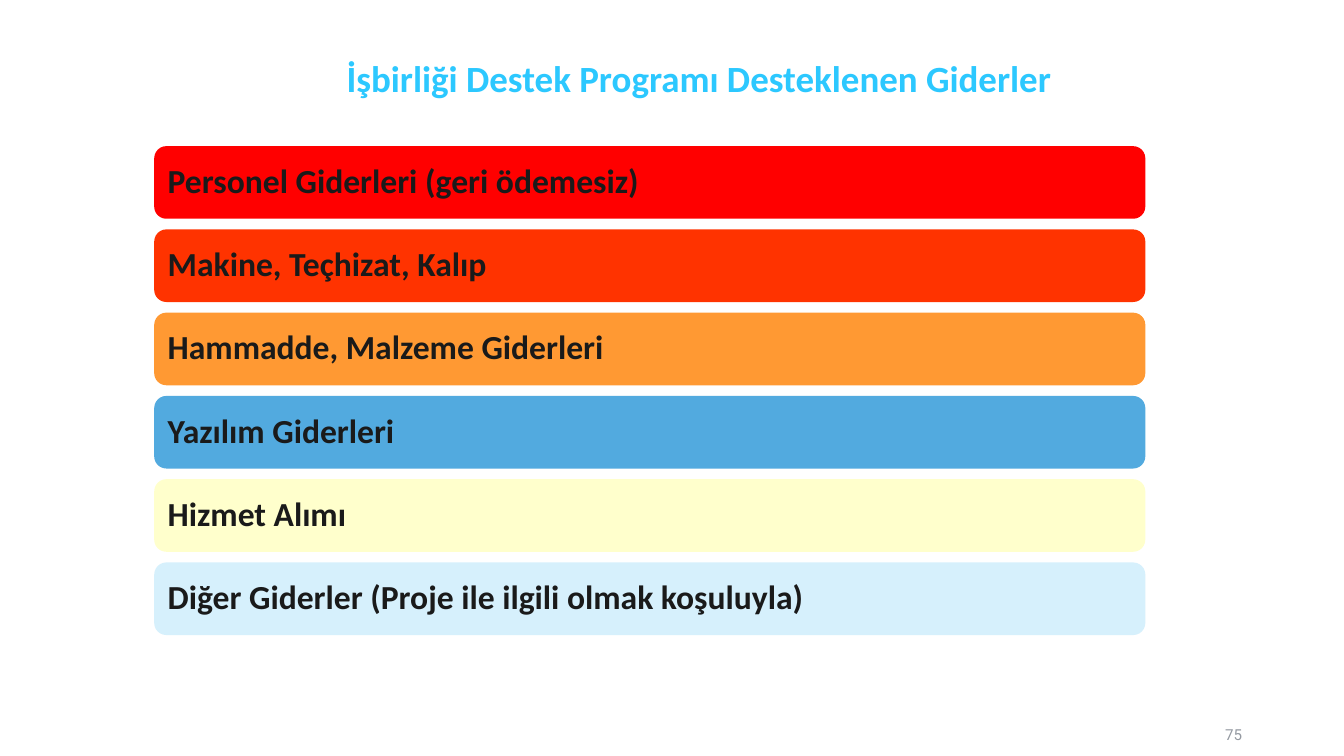
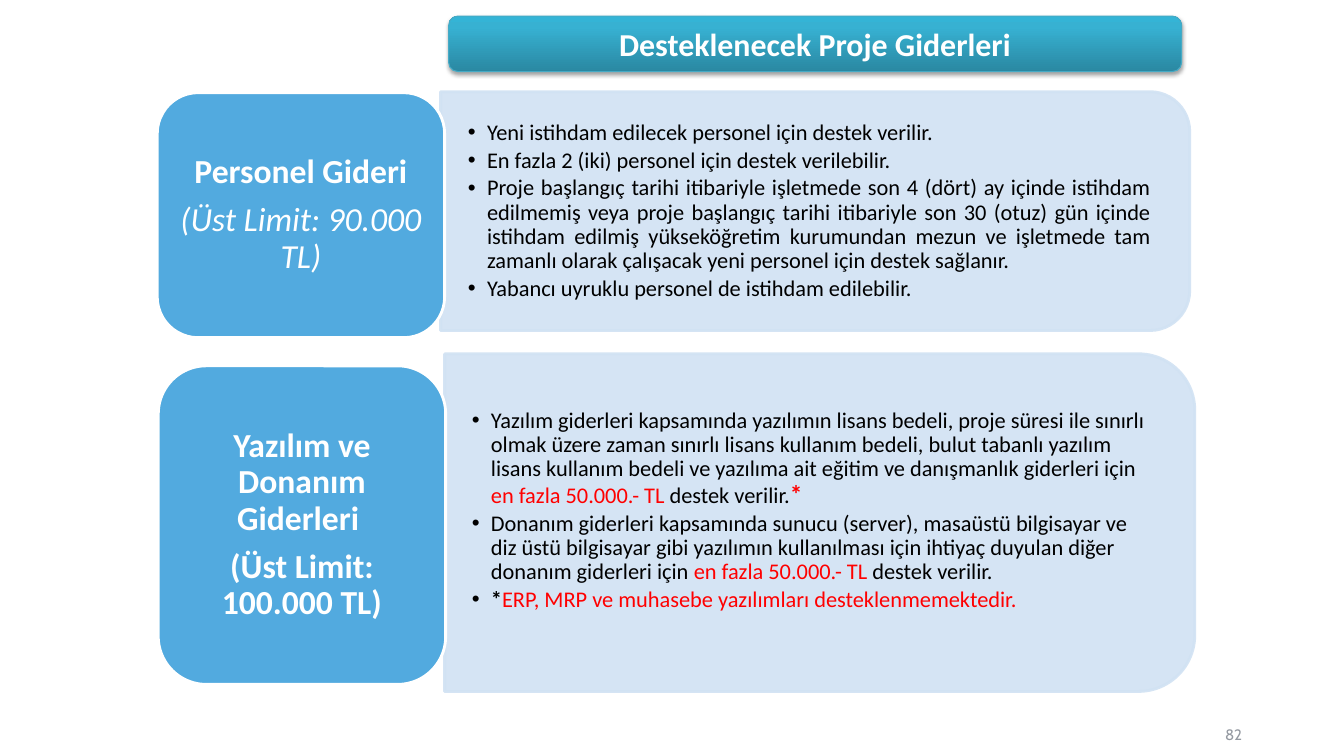
from dataclasses import dataclass

import pptx
import pptx.dml.color
import pptx.enum.shapes
import pptx.enum.text
import pptx.oxml
import pptx.oxml.ns
import pptx.util

Inches, Pt = pptx.util.Inches, pptx.util.Pt
SHAPE = pptx.enum.shapes.MSO_SHAPE
ALIGN = pptx.enum.text.PP_ALIGN
ANCHOR = pptx.enum.text.MSO_ANCHOR
qn = pptx.oxml.ns.qn


@dataclass(frozen=True)
class Theme:
    font: str = "Calibri"
    title: str = "2CC8FF"
    white: str = "FFFFFF"
    black: str = "000000"
    ink: str = "1A1A1A"
    red: str = "FF0000"
    blue: str = "52AADF"
    panel: str = "D1E2F3"
    muted: str = "9499A1"
    band_line: str = "46AAC5"
    band_stops: tuple = ((0, "2A88A2"), (80, "37B1D2"), (100, "34B4D6"))
    title_size: float = 26.4
    band_size: float = 22.8
    head_size: float = 24
    body_size: float = 16
    star_size: float = 18
    page_size: float = 10.8


T = Theme()

# Content: a paragraph is a list of (text, format) runs
COSTS_TITLE = "İşbirliği Destek Programı Desteklenen Giderler"
COSTS = [
    ("Personel Giderleri (geri ödemesiz)", T.red),
    ("Makine, Teçhizat, Kalıp", "FF3300"),
    ("Hammadde, Malzeme Giderleri", "FF9933"),
    ("Yazılım Giderleri", T.blue),
    ("Hizmet Alımı", "FFFFCC"),
    ("Diğer Giderler (Proje ile ilgili olmak koşuluyla)", "D6F0FC"),
]

LIMITS_TITLE = "Desteklenecek Proje Giderleri"
RED = {"color": T.red}
LIMITS = [
    {
        "card": (1.56, 0.92, 2.85, 2.43),
        "panel": (4.37, 0.91, 7.43, 2.37),
        "align": ALIGN.JUSTIFY,
        "bottom": 0.14,
        "head": [
            [("Personel Gideri", {})],
            [("(Üst Limit: 90.000 TL)", {"bold": False, "italic": True})],
        ],
        "points": [
            [("Yeni istihdam edilecek personel için destek verilir.", {})],
            [("En fazla 2 (iki) personel için destek verilebilir.", {})],
            [("Proje başlangıç tarihi itibariyle işletmede son 4 (dört) ay içinde "
              "istihdam edilmemiş veya proje başlangıç tarihi itibariyle son 30 (otuz) "
              "gün içinde istihdam edilmiş yükseköğretim kurumundan mezun ve işletmede "
              "tam zamanlı olarak çalışacak yeni personel için destek sağlanır.", {})],
            [("Yabancı uyruklu personel de istihdam edilebilir.", {})],
        ],
    },
    {
        "card": (1.57, 3.63, 2.85, 3.16),
        "panel": (4.41, 3.51, 7.44, 3.35),
        "align": ALIGN.LEFT,
        "bottom": 0.38,
        "head": [
            [("Yazılım ve Donanım Giderleri ", {})],
            [("(Üst Limit: 100.000 TL)", {})],
        ],
        "points": [
            [("Yazılım giderleri kapsamında yazılımın lisans bedeli, proje süresi ile "
              "sınırlı olmak üzere zaman sınırlı lisans kullanım bedeli, bulut tabanlı "
              "yazılım lisans kullanım bedeli ve yazılıma ait eğitim ve danışmanlık "
              "giderleri için ", {}),
             ("en fazla 50.000.- TL", RED),
             (" destek verilir.", {}),
             ("*", {"color": T.red, "size": T.star_size, "bold": True})],
            [("Donanım giderleri kapsamında sunucu (server), masaüstü bilgisayar ve "
              "diz üstü bilgisayar gibi yazılımın kullanılması için ihtiyaç duyulan "
              "diğer donanım giderleri için ", {}),
             ("en fazla 50.000.- TL ", RED),
             ("destek verilir.", {})],
            [("*", {"bold": True}),
             ("ERP, MRP ve muhasebe yazılımları desteklenmemektedir.", RED)],
        ],
    },
]

CORNER = 1 / 6       # corner radius as a share of the short side
CORNER_INSET = 0.29  # share of the radius that the text area loses


def rgb(value):
    return pptx.dml.color.RGBColor.from_string(value)


def place(sp, box):
    sp.left, sp.top, sp.width, sp.height = map(Inches, box)


def add_bullet(p, indent=0.19):
    pPr = p._p.get_or_add_pPr()
    pPr.set("marL", str(Inches(indent)))
    pPr.set("indent", str(-Inches(indent)))
    for tag, key, value in (("a:buFont", "typeface", "Arial"),
                            ("a:buChar", "char", "•")):
        pptx.oxml.ns  # namespace map used by the element factory
        el = pPr.makeelement(qn(tag), {key: value})
        pPr.append(el)


def write(sp, paragraphs, size, color, bold=False, font=T.font, align=ALIGN.LEFT,
          anchor=ANCHOR.MIDDLE, insets=(0.1, 0.1, 0.1, 0.1), line=None, after=0,
          bullet=False):
    """Fill a shape with paragraphs; each is a string or a list of runs."""
    tf = sp.text_frame
    tf.word_wrap = True
    tf.auto_size = pptx.enum.text.MSO_AUTO_SIZE.NONE
    tf.vertical_anchor = anchor
    tf.margin_left, tf.margin_top, tf.margin_right, tf.margin_bottom = map(Inches, insets)
    for i, runs in enumerate(paragraphs):
        p = tf.add_paragraph() if i else tf.paragraphs[0]
        p.alignment = align
        p.space_after = Pt(after)
        if line:
            p.line_spacing = line
        if bullet:
            add_bullet(p)
        for text, fmt in ([(runs, {})] if isinstance(runs, str) else runs):
            r = p.add_run()
            r.text = text
            r.font.name = font
            r.font.size = Pt(fmt.get("size", size))
            r.font.bold = fmt.get("bold", bold)
            r.font.italic = fmt.get("italic", False)
            r.font.color.rgb = rgb(fmt.get("color", color))


def add_box(s, kind, box, fill=None, line=None, width=2):
    sp = s.shapes.add_shape(kind, *map(Inches, box))
    sp.shadow.inherit = False
    if fill:
        sp.fill.solid()
        sp.fill.fore_color.rgb = rgb(fill)
    if line:
        sp.line.color.rgb = rgb(line)
        sp.line.width = Pt(width)
    else:
        sp.line.fill.background()
    return sp


def add_text(s, box, paragraphs, **fmt):
    write(s.shapes.add_textbox(*map(Inches, box)), paragraphs, **fmt)


def add_slide(prs, title, box, page, page_font, **fmt):
    """Title-only slide with its title placed and its page number."""
    s = prs.slides.add_slide(prs.slide_layouts[5])
    place(s.shapes.title, box)
    write(s.shapes.title, [title], bold=True, align=ALIGN.CENTER,
          anchor=ANCHOR.TOP, **fmt)
    add_text(s, (9.29, 7.09, 3.11, 0.4), [page], size=T.page_size, color=T.muted,
             font=page_font, align=ALIGN.RIGHT, insets=(0.08, 0.04, 0.08, 0.04))
    return s


def add_band(s, box):
    """Glossy rounded band behind the title."""
    sp = add_box(s, SHAPE.ROUNDED_RECTANGLE, box, line=T.band_line, width=0.75)
    sp.fill.gradient()
    ns = pptx.oxml.ns.nsdecls("a")
    stops = "".join(f'<a:gs pos="{pos * 1000}"><a:srgbClr val="{color}"/></a:gs>'
                    for pos, color in T.band_stops)
    gradient = pptx.oxml.parse_xml(
        f'<a:gradFill {ns} rotWithShape="1"><a:gsLst>{stops}</a:gsLst>'
        '<a:lin ang="16200000" scaled="0"/></a:gradFill>')
    shadow = pptx.oxml.parse_xml(
        f'<a:effectLst {ns}><a:outerShdw blurRad="{Pt(3.1)}" dist="{Pt(1.8)}" '
        'dir="5400000" rotWithShape="0"><a:srgbClr val="000000">'
        '<a:alpha val="35000"/></a:srgbClr></a:outerShdw></a:effectLst>')
    spPr = sp._element.spPr
    for tag, el in (("a:gradFill", gradient), ("a:effectLst", shadow)):
        spPr.replace(spPr.find(qn(tag)), el)
    s.shapes._spTree.insert(2, sp._element)


def add_panel(s, box):
    """Pale panel rounded on its right side: a quarter-turned shape."""
    x, y, w, h = box
    sp = add_box(s, SHAPE.ROUND_2_SAME_RECTANGLE,
                 (x + (w - h) / 2, y + (h - w) / 2, h, w), T.panel, T.panel)
    sp.rotation = 90
    for color in sp._element.spPr.iter(qn("a:srgbClr")):
        color.append(color.makeelement(qn("a:alpha"), {"val": "90000"}))


def build_costs(prs):
    s = add_slide(prs, COSTS_TITLE, (1.69, 0.33, 10.49, 0.71), "75", "Roboto",
                  size=T.title_size, color=T.title, line=Pt(43.7),
                  insets=(0.09, 0.05, 0.09, 0.05))
    first, last = 1.45, 5.58
    step = (last - first) / (len(COSTS) - 1)
    for i, (text, fill) in enumerate(COSTS):
        bar = add_box(s, SHAPE.ROUNDED_RECTANGLE,
                      (1.53, first + i * step, 9.83, 0.72), fill)
        write(bar, [text], T.head_size, T.ink, bold=True, line=0.9)


def build_limits(prs):
    band = (4.45, 0.16, 7.27, 0.55)
    s = add_slide(prs, LIMITS_TITLE, band, "82", "Cabin", size=T.band_size,
                  color=T.white, insets=(0.11, 0.08, 0.11, 0.06))
    add_band(s, band)
    for item in LIMITS:
        x, y, w, h = item["panel"]
        add_panel(s, item["panel"])
        add_text(s, (x, y, w - h * CORNER * CORNER_INSET, h), item["points"],
                 size=T.body_size, color=T.black, align=item["align"], line=0.9,
                 after=2.5, bullet=True, insets=(0.27, 0.14, 0.27, item["bottom"]))
        card = add_box(s, SHAPE.ROUNDED_RECTANGLE, item["card"], T.blue, T.white)
        write(card, item["head"], T.head_size, T.white, bold=True,
              align=ALIGN.CENTER, line=0.9, after=8.4, insets=(0.05,) * 4)


def main():
    prs = pptx.Presentation()
    prs.slide_width, prs.slide_height = Inches(13.33), Inches(7.5)
    build_costs(prs)
    build_limits(prs)
    prs.save("out.pptx")


if __name__ == "__main__":
    main()
